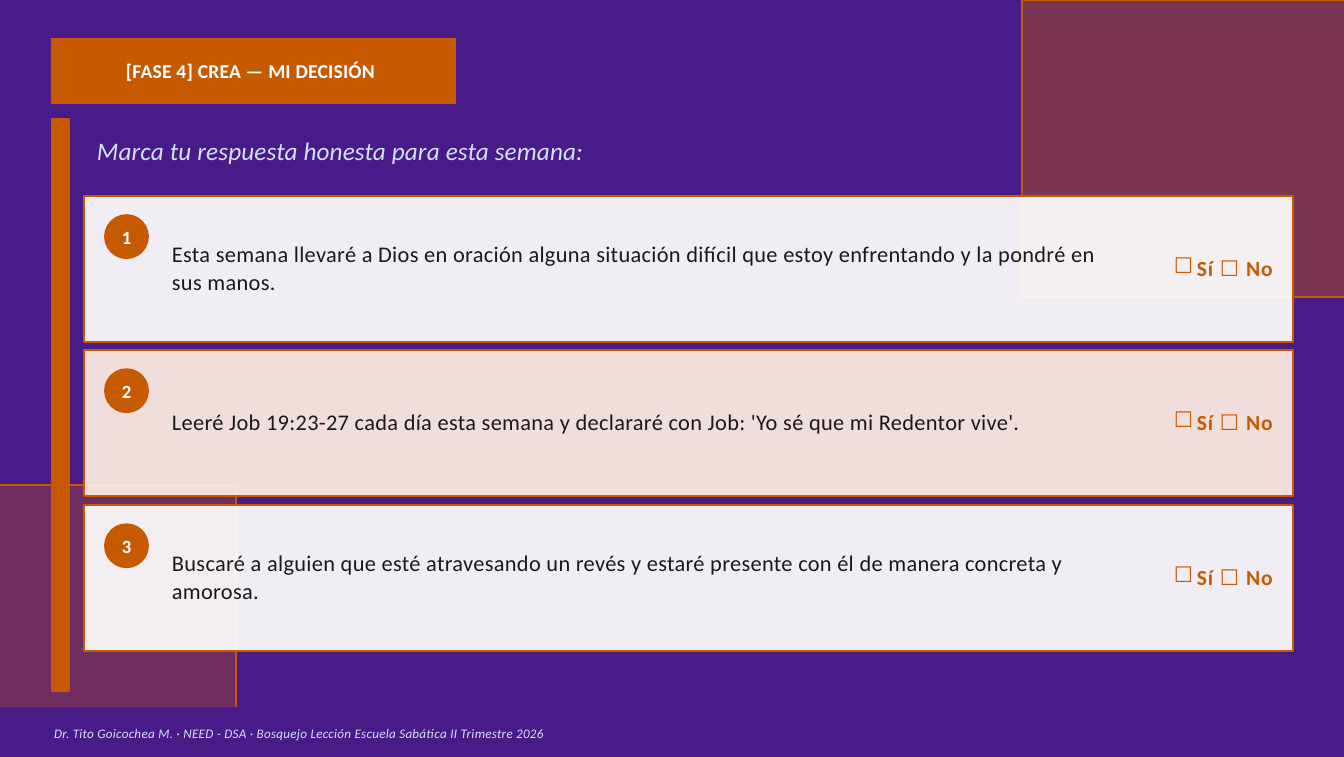
from lxml import etree
from pptx import Presentation
from pptx.dml.color import RGBColor
from pptx.enum import shapes, text
from pptx.oxml import ns
from pptx.util import Inches, Pt

PX = 914400 / 134.4
PURPLE, ORANGE, PALE, INK, WHITE = "491B89", "C75A00", "D0E3F5", "1A1A1A", "FFFFFF"
STATEMENTS = [
    ("Esta semana llevaré a Dios en oración alguna situación difícil que estoy "
     "enfrentando y la pondré en sus manos.", WHITE),
    ("Leeré Job 19:23-27 cada día esta semana y declararé con Job: "
     "'Yo sé que mi Redentor vive'.", "FFEFE4"),
    ("Buscaré a alguien que esté atravesando un revés y estaré presente con él "
     "de manera concreta y amorosa.", WHITE),
]


def emu(*lengths):
    """Turn px lengths into EMU."""
    return [round(n * PX) for n in lengths]


def rgb(value):
    """Return the colour for a hex string."""
    return RGBColor.from_string(value)


def set_alpha(shape, percent):
    """Make a solid fill partly transparent."""
    clr = shape.fill._xPr.find(".//" + ns.qn("a:srgbClr"))
    etree.SubElement(clr, ns.qn("a:alpha")).set("val", str(percent * 1000))


def add_block(s, box, fill, line=None, alpha=None, kind=shapes.MSO_SHAPE.RECTANGLE):
    """Add a flat filled shape."""
    sp = s.shapes.add_shape(kind, *emu(*box))
    sp.shadow.inherit = False
    sp.fill.solid()
    sp.fill.fore_color.rgb = rgb(fill)
    if alpha:
        set_alpha(sp, alpha)
    if line:
        sp.line.color.rgb = rgb(line)
        sp.line.width = Pt(1)
    else:
        sp.line.fill.background()
    return sp


def add_edges(s, points):
    """Draw an open orange outline through the points."""
    builder = s.shapes.build_freeform(*points[0], scale=PX)
    builder.add_line_segments(points[1:], close=False)
    sp = builder.convert_to_shape()
    sp.shadow.inherit = False
    sp.fill.background()
    sp.line.color.rgb = rgb(ORANGE)
    sp.line.width = Pt(1)


def style(font, size, color, bold=False, italic=False):
    """Format a font in Calibri."""
    font.name, font.size, font.bold, font.italic = "Calibri", Pt(size), bold, italic
    font.color.rgb = rgb(color)


def track(p, spacing):
    """Space the letters of a paragraph, in hundredths of a point."""
    for r in p.runs:
        r._r.get_or_add_rPr().set("spc", str(spacing))


def write(sp, words, size, color, align=text.PP_ALIGN.LEFT, spacing=0, **emphasis):
    """Fill a shape with one vertically centred paragraph."""
    tf = sp.text_frame
    tf.margin_left = tf.margin_right = tf.margin_top = tf.margin_bottom = 0
    tf.word_wrap = True
    tf.auto_size = text.MSO_AUTO_SIZE.NONE
    tf.vertical_anchor = text.MSO_ANCHOR.MIDDLE
    p = tf.paragraphs[0]
    p.text = words
    p.alignment = align
    style(p.font, size, color, **emphasis)
    track(p, spacing)
    return p


def add_backdrop(s):
    """Colour the slide and place the translucent corners and side bar."""
    fill = s.background.fill
    fill.solid()
    fill.fore_color.rgb = rgb(PURPLE)
    add_block(s, (1022, 0, 322, 297), ORANGE, alpha=40)
    add_edges(s, [(1344, 0), (1022, 0), (1022, 297), (1344, 297)])
    add_block(s, (0, 485, 236, 222), ORANGE, alpha=30)
    add_edges(s, [(0, 485), (236, 485), (236, 707)])
    add_block(s, (52, 119, 17, 572), ORANGE, ORANGE)


def add_heading(s, x, y):
    """Place the phase banner and the slide title."""
    banner = add_block(s, (x, y, 405, 66), ORANGE)
    write(banner, "[FASE 4] CREA — MI DECISIÓN", 10.5, WHITE, spacing=15, bold=True)
    banner.text_frame.margin_left = emu(75)[0]
    title = s.shapes.title
    title.left, title.top, title.width, title.height = emu(x + 46, y + 94, 560, 36)
    write(title, "Marca tu respuesta honesta para esta semana:", 13.5, PALE,
          spacing=10, italic=True)


def add_choice(s, x, y, w, h):
    """Place the yes and no tick boxes."""
    sp = s.shapes.add_textbox(*emu(x, y, w, h))
    p = write(sp, "", 11.5, ORANGE, bold=True)
    pPr = p._p.get_or_add_pPr()
    indent, hang = emu(25, -23)
    pPr.set("marL", str(indent))
    pPr.set("indent", str(hang))
    bullet = etree.Element(ns.qn("a:buChar"))
    bullet.set("char", "☐")
    pPr.insert(0, bullet)
    for words, name in (("Sí ", "Calibri"), ("☐ ", "Roboto"), ("No", "Calibri")):
        r = p.add_run()
        r.text = words
        style(r.font, 11.5, ORANGE, bold=True)
        r.font.name = name
    track(p, 45)


def add_card(s, x, y, w, h, number, words, fill):
    """Place one numbered statement with its answer boxes."""
    add_block(s, (x, y, w, h), fill, ORANGE, alpha=92)
    badge = add_block(s, (x + 21, y + 19, 43, 43), ORANGE, ORANGE,
                      kind=shapes.MSO_SHAPE.OVAL)
    write(badge, str(number), 10, WHITE, text.PP_ALIGN.CENTER, bold=True)
    sp = s.shapes.add_textbox(*emu(x + 88, y + 38, 943, h - 80))
    write(sp, words, 12, INK, spacing=17).line_spacing = 1.03
    add_choice(s, x + 1088, y + 57, 115, 30)


def add_footer(s, x, y, w, h):
    """Place the footer strip and its credit line."""
    add_block(s, (x, y, w, h), PURPLE)
    sp = s.shapes.add_textbox(*emu(x + 54, y + 16, 560, 20))
    write(sp, "Dr. Tito Goicochea M. · NEED - DSA · Bosquejo Lección Escuela "
          "Sabática II Trimestre 2026", 7, PALE, spacing=17, italic=True)


def main():
    """Build and save the slide."""
    prs = Presentation()
    prs.slide_width, prs.slide_height = Inches(10), Inches(5.63)
    s = prs.slides.add_slide(prs.slide_layouts[5])
    add_backdrop(s)
    add_heading(s, 51, 38)
    for i, (words, fill) in enumerate(STATEMENTS):
        add_card(s, 84, 196 + 309 * i // 2, 1209, 146, i + 1, words, fill)
    add_footer(s, 0, 707, 1344, 49)
    prs.save("out.pptx")


if __name__ == "__main__":
    main()
